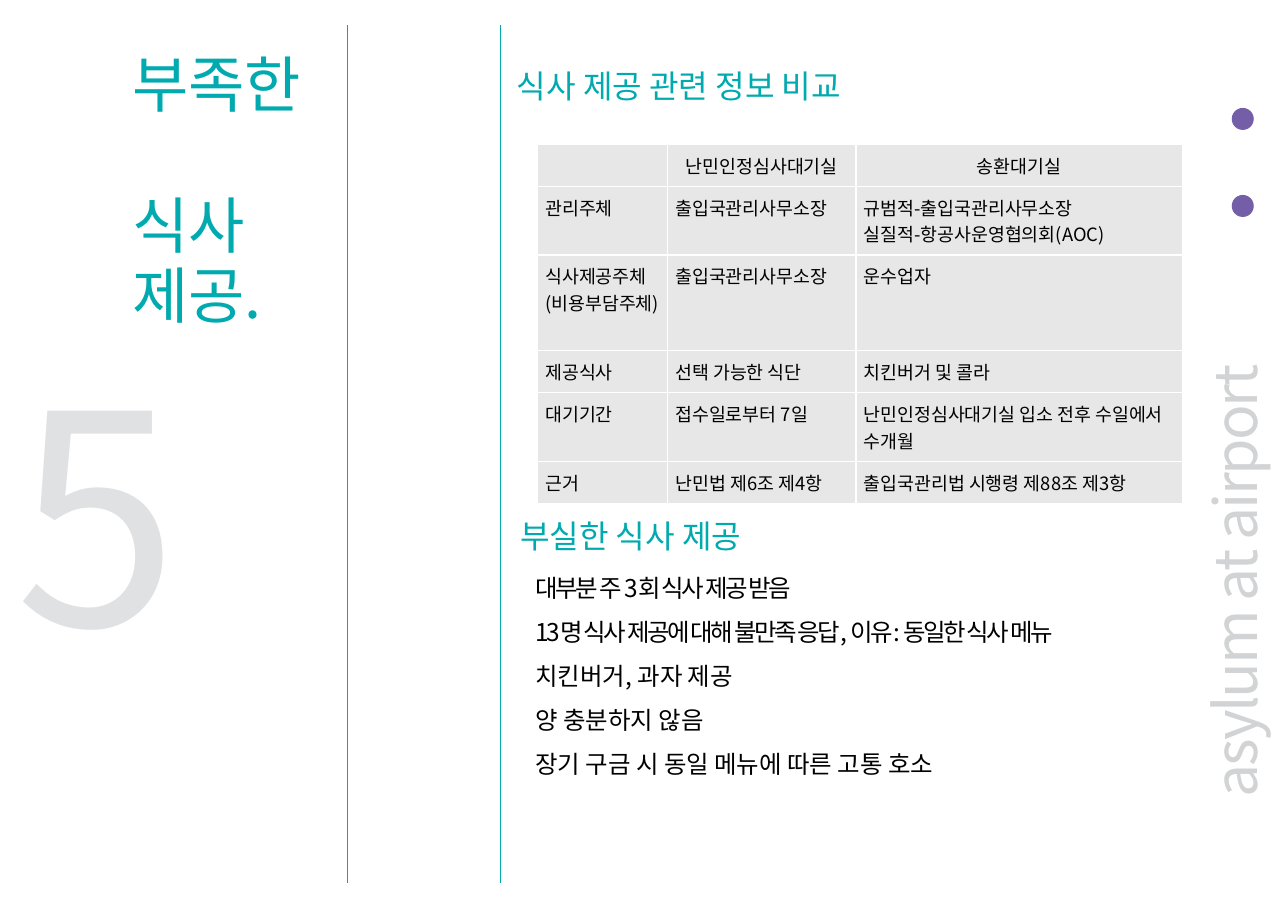
from dataclasses import dataclass
from typing import Optional

from lxml.etree import SubElement
from pptx import Presentation
from pptx.dml.color import RGBColor
from pptx.enum.shapes import MSO_CONNECTOR, MSO_SHAPE
from pptx.enum.text import MSO_ANCHOR, MSO_AUTO_SIZE, PP_ALIGN
from pptx.oxml.ns import qn
from pptx.util import Emu, Pt

FONT = "Noto Sans CJK KR"
PX = 9144
COLORS = {
    "teal": "00AAAE",
    "purple": "745EA8",
    "number": "E0E1E3",
    "side": "D1D3D4",
    "cell": "E7E7E7",
    "black": "000000",
    "white": "FFFFFF",
}


@dataclass
class Line:
    text: str
    tracking: float = 0
    before: float = 0


@dataclass
class Block:
    lines: list[Line]
    box: tuple[int, int, int, int]
    size: float
    color: str
    spacing: Optional[float] = None
    placeholder: Optional[int] = None
    rotation: int = 0


BLOCKS = [
    Block([Line("부족한"), Line("식사", before=46), Line("제공.")],
          (120, 45, 315, 276), 40, "teal", 46, placeholder=0),
    Block([Line("식사 제공 관련 정보 비교")],
          (469, 62, 630, 60), 21, "teal", 24, placeholder=1),
    Block([Line("부실한 식사 제공")],
          (472, 470, 630, 36), 21, "teal", 24, placeholder=3),
    Block([Line("대부분 주 3회 식사 제공 받음", -1.5),
           Line("13명 식사 제공에 대해 불만족 응답, 이유: 동일한 식사 메뉴", -1.5),
           Line("치킨버거, 과자 제공"),
           Line("양 충분하지 않음"),
           Line("장기 구금 시 동일 메뉴에 따른 고통 호소")],
          (486, 507, 650, 266), 16, "black", 28.75, placeholder=2),
    Block([Line("asylum at airport", -1.5)],
          (826, 372, 624, 79), 38.5, "side", 38.5, rotation=270),
    Block([Line("5")], (14, 302, 180, 390), 192, "number"),
]

RULE_XS = [315, 454]
DOT_YS = [98, 177]

TABLE_BOX = (488, 131)
COL_WIDTHS = [118, 171, 296]
ROW_HEIGHTS = [38, 62, 87, 38, 62, 38]
ROWS = [
    ["", "난민인정심사대기실", "송환대기실"],
    ["관리주체", "출입국관리사무소장",
     "규범적-출입국관리사무소장\n실질적-항공사운영협의회(AOC)"],
    ["식사제공주체\n(비용부담주체)", "출입국관리사무소장", "운수업자"],
    ["제공식사", "선택 가능한 식단", "치킨버거 및 콜라"],
    ["대기기간", "접수일로부터 7일", "난민인정심사대기실 입소 전후 수일에서 수개월"],
    ["근거", "난민법 제6조 제4항", "출입국관리법 시행령 제88조 제3항"],
]


def px(n: int) -> Emu:
    return Emu(n * PX)


def rgb(name: str) -> RGBColor:
    return RGBColor.from_string(COLORS[name])


def format_runs(p, size: float, color: str, tracking: float = 0) -> None:
    for r in p.runs:
        r.font.size = Pt(size)
        r.font.name = FONT
        r.font.bold = False
        r.font.color.rgb = rgb(color)
        rPr = r._r.get_or_add_rPr()
        rPr.set("spc", str(int(tracking * 100)))
        SubElement(rPr, qn("a:ea"), typeface=FONT)


def add_block(slide, block: Block) -> None:
    x, y, w, h = map(px, block.box)
    if block.placeholder is None:
        sp = slide.shapes.add_textbox(x, y, w, h)
    else:
        sp = slide.placeholders[block.placeholder]
        sp.left, sp.top, sp.width, sp.height = x, y, w, h
    sp.rotation = block.rotation
    tf = sp.text_frame
    tf.word_wrap = True
    tf.auto_size = MSO_AUTO_SIZE.NONE
    tf.vertical_anchor = MSO_ANCHOR.TOP
    tf.margin_left = tf.margin_right = tf.margin_top = tf.margin_bottom = 0
    tf.text = "\n".join(line.text for line in block.lines)
    for p, line in zip(tf.paragraphs, block.lines):
        p.alignment = PP_ALIGN.LEFT
        if block.spacing:
            p.line_spacing = Pt(block.spacing)
        p.space_before = Pt(line.before)
        pPr = p._p.get_or_add_pPr()
        pPr.set("marL", "0")
        pPr.set("indent", "0")
        SubElement(pPr, qn("a:buNone"))
        format_runs(p, block.size, block.color, line.tracking)


def add_rule(slide, x: int) -> None:
    rule = slide.shapes.add_connector(
        MSO_CONNECTOR.STRAIGHT, px(x), px(23), px(x), px(802))
    rule.line.color.rgb = rgb("teal")
    rule.line.width = Pt(0.25)
    SubElement(rule._element.spPr, qn("a:effectLst"))


def add_dot(slide, y: int) -> None:
    dot = slide.shapes.add_shape(MSO_SHAPE.OVAL, px(1118), px(y), px(20), px(20))
    dot.shadow.inherit = False
    dot.fill.solid()
    dot.fill.fore_color.rgb = rgb("purple")
    dot.line.fill.background()


def format_cell(cell, text: str, header: bool) -> None:
    tcPr = cell._tc.get_or_add_tcPr()
    for side in ("lnL", "lnR", "lnT", "lnB"):
        ln = SubElement(tcPr, qn(f"a:{side}"), w=str(Pt(1)))
        fill = SubElement(ln, qn("a:solidFill"))
        SubElement(fill, qn("a:srgbClr"), val=COLORS["white"])
    cell.fill.solid()
    cell.fill.fore_color.rgb = rgb("cell")
    cell.margin_left = cell.margin_right = px(7)
    cell.margin_top = cell.margin_bottom = px(7)
    cell.text_frame.text = text
    for p in cell.text_frame.paragraphs:
        p.alignment = PP_ALIGN.CENTER if header else PP_ALIGN.LEFT
        format_runs(p, 12, "black")
        if not text:
            SubElement(p._p, qn("a:endParaRPr"), sz="1200")


def add_comparison(slide) -> None:
    x, y = TABLE_BOX
    table = slide.shapes.add_table(
        len(ROWS), len(COL_WIDTHS), px(x), px(y),
        px(sum(COL_WIDTHS)), px(sum(ROW_HEIGHTS))).table
    table.first_row = table.horz_banding = False
    for col, width in zip(table.columns, COL_WIDTHS):
        col.width = px(width)
    for i, (row, height) in enumerate(zip(table.rows, ROW_HEIGHTS)):
        row.height = px(height)
        for cell, text in zip(row.cells, ROWS[i]):
            format_cell(cell, text, header=i == 0)


def main() -> None:
    prs = Presentation()
    prs.slide_width, prs.slide_height = px(1169), px(827)
    slide = prs.slides.add_slide(prs.slide_layouts.get_by_name("Comparison"))
    unused = slide.placeholders[4]._element
    unused.getparent().remove(unused)
    for x in RULE_XS:
        add_rule(slide, x)
    for y in DOT_YS:
        add_dot(slide, y)
    for block in BLOCKS:
        add_block(slide, block)
    add_comparison(slide)
    prs.save("out.pptx")


if __name__ == "__main__":
    main()
